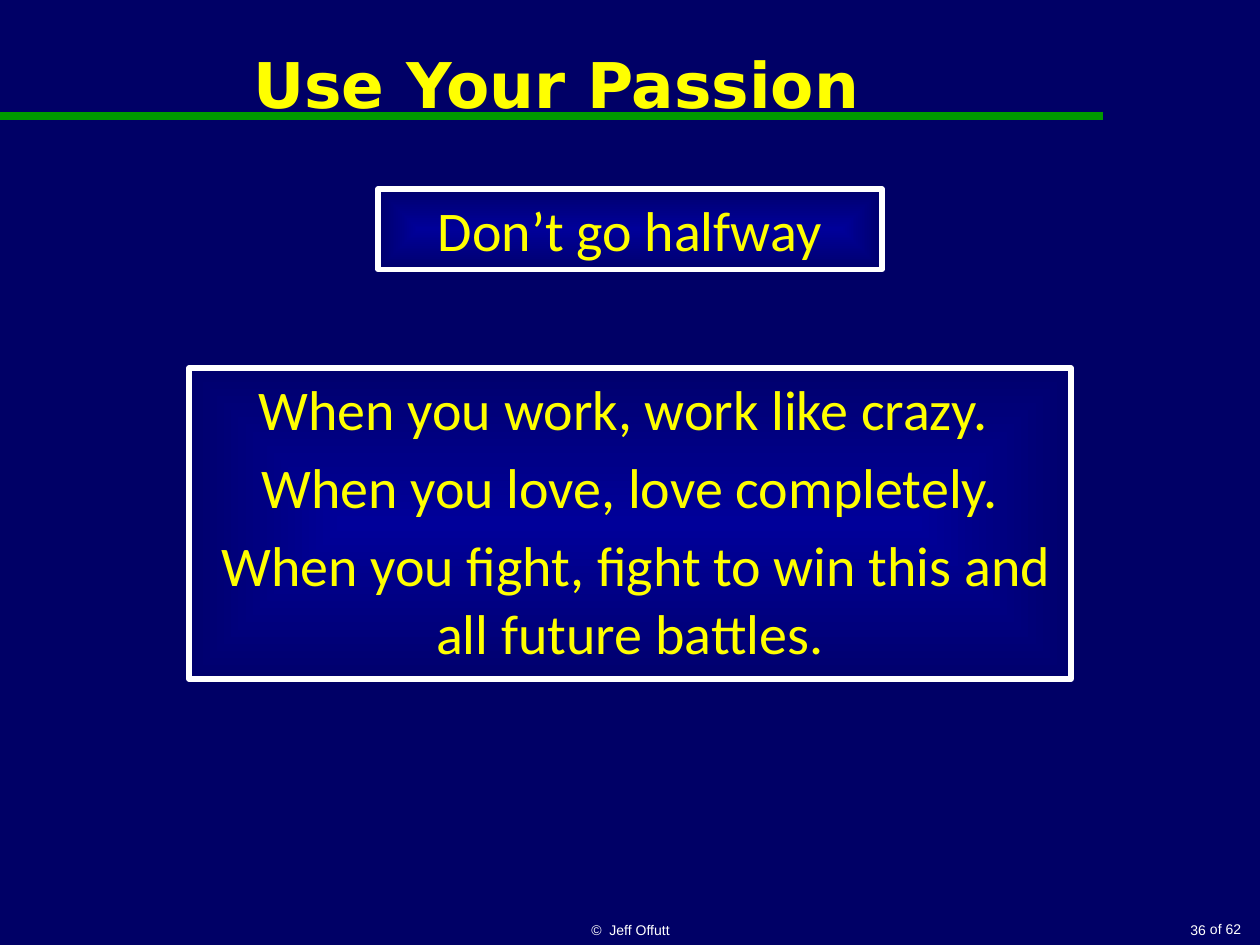
"""Build the "Use Your Passion" slide."""
from lxml import etree
from pptx import Presentation
from pptx import util as u
from pptx.dml.color import RGBColor
from pptx.enum import shapes, text
from pptx.oxml import parse_xml
from pptx.oxml.ns import nsdecls, qn

THEME = {
    "page": RGBColor.from_string("000066"),
    "rule": RGBColor.from_string("009900"),
    "frame": RGBColor.from_string("FFFFFF"),
    "glow": [RGBColor.from_string(code) for code in ("000099", "00006D")],
    "title": {"name": "DejaVu Sans", "size": 36, "bold": True, "color": "FFFF00"},
    "body": {"name": "Calibri", "size": 32, "bold": False, "color": "FFFF00"},
    "footer": {"name": "Arial", "size": 8, "bold": False, "color": "FFFFFF"},
}
LEFT, CENTER, RIGHT = text.PP_ALIGN.LEFT, text.PP_ALIGN.CENTER, text.PP_ALIGN.RIGHT
TOP, MIDDLE, BOTTOM = text.MSO_ANCHOR.TOP, text.MSO_ANCHOR.MIDDLE, text.MSO_ANCHOR.BOTTOM

TITLE = "Use Your Passion"
TITLE_AREA = (0.08, 0, 8.67, 1.33)
RULE_Y, RULE_END = 0.92, 8.75
FOOTERS = [
    ("of 62", (9.5, 7.26, 0.45, 0.24), RIGHT, TOP, False),
    ("©  Jeff Offutt", (3.42, 7.17, 3.17, 0.33), CENTER, BOTTOM, True),
    ("36", (7.92, 7.17, 1.75, 0.33), RIGHT, BOTTOM, True),
]
PANELS = [
    ((3, 1.5, 4, 0.64), ["Don’t go halfway"]),
    ((1.5, 2.92, 7, 2.47), [
        "When you work, work like crazy. ",
        "When you love, love completely.",
        " When you fight, fight to win this and all future battles.",
    ]),
]


def inches(area):
    return [u.Inches(value) for value in area]


def write(box, lines, style, align=CENTER, anchor=MIDDLE, wrap=True):
    frame = box.text_frame
    frame.word_wrap, frame.vertical_anchor = wrap, anchor
    look = THEME[style]
    for index, line in enumerate(lines):
        para = frame.add_paragraph() if index else frame.paragraphs[0]
        para.alignment = align
        para.space_before = u.Pt(look["size"] * 0.2 if index else 0)
        span = para.add_run()
        span.text = line
        values = {"name": look["name"], "size": u.Pt(look["size"]), "bold": look["bold"]}
        for name, value in values.items():
            setattr(span.font, name, value)
        span.font.color.rgb = RGBColor.from_string(look["color"])


def add_rule(page):
    rule = page.shapes.add_connector(
        shapes.MSO_CONNECTOR.STRAIGHT, *inches((0, RULE_Y, RULE_END, RULE_Y)))
    rule.line.color.rgb, rule.line.width = THEME["rule"], u.Pt(4.5)
    etree.SubElement(rule.element.spPr, qn("a:effectLst"))


def add_panel(page, area, lines):
    panel = page.shapes.add_shape(shapes.MSO_SHAPE.RECTANGLE, *inches(area))
    panel.shadow.inherit = False
    panel.line.color.rgb, panel.line.width = THEME["frame"], u.Pt(3)
    panel.fill.gradient()
    for stop, color, position in zip(panel.fill.gradient_stops, THEME["glow"], (0, 1)):
        stop.color.rgb, stop.position = color, position
    gradient = panel.element.spPr.find(qn("a:gradFill"))
    gradient.replace(gradient.find(qn("a:lin")), parse_xml(
        f'<a:path {nsdecls("a")} path="shape">'
        '<a:fillToRect l="50000" t="50000" r="50000" b="50000"/></a:path>'))
    write(panel, lines, "body", anchor=TOP)


def main():
    deck = Presentation()
    deck.slide_width, deck.slide_height = inches((10, 7.5))
    page = deck.slides.add_slide(deck.slide_layouts[5])
    page.background.fill.solid()
    page.background.fill.fore_color.rgb = THEME["page"]
    add_rule(page)
    title = page.shapes.title
    title.left, title.top, title.width, title.height = inches(TITLE_AREA)
    write(title, [TITLE], "title")
    for words, area, align, anchor, wrap in FOOTERS:
        write(page.shapes.add_textbox(*inches(area)), [words], "footer", align, anchor, wrap)
    for area, lines in PANELS:
        add_panel(page, area, lines)
    deck.save("out.pptx")


if __name__ == "__main__":
    main()
